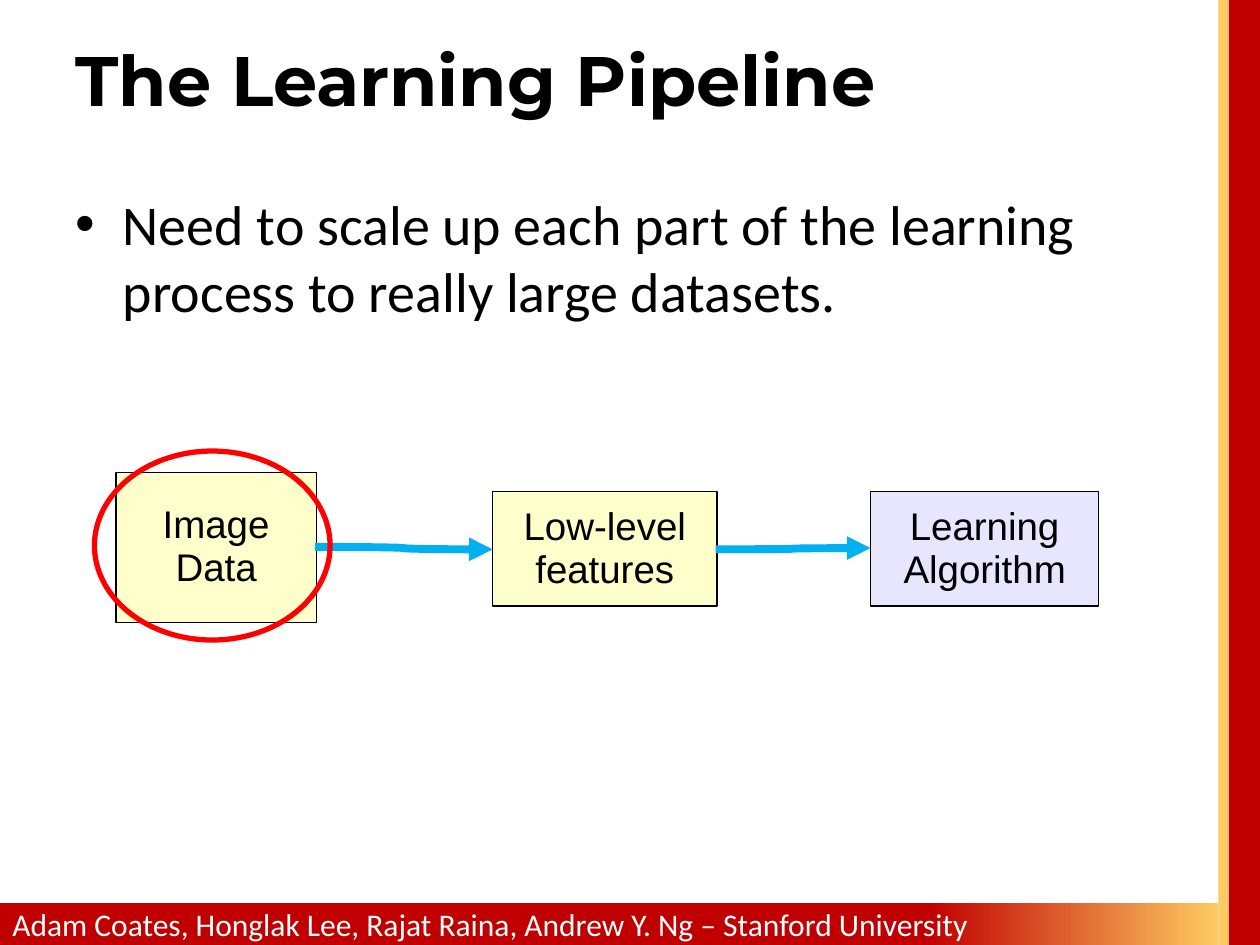
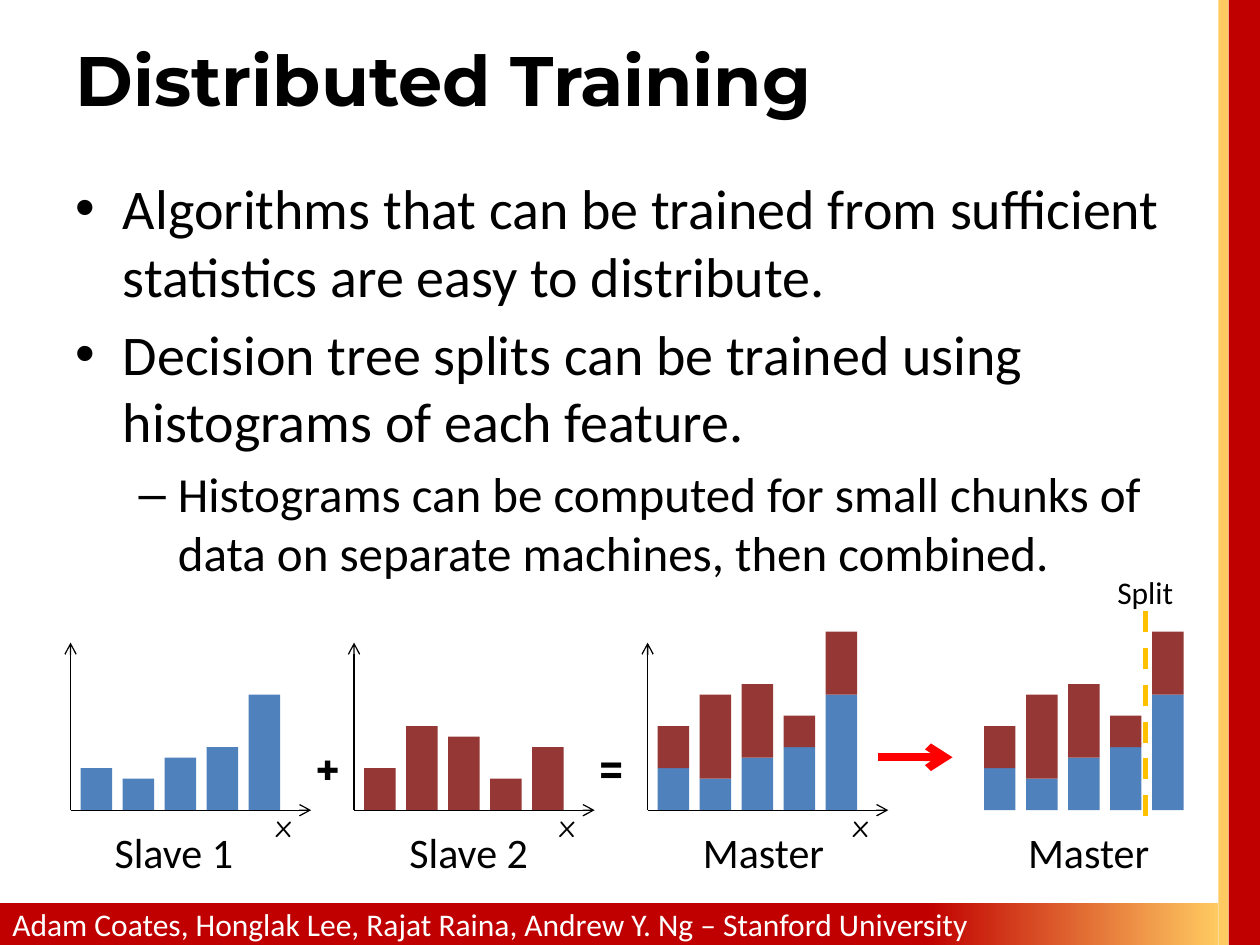
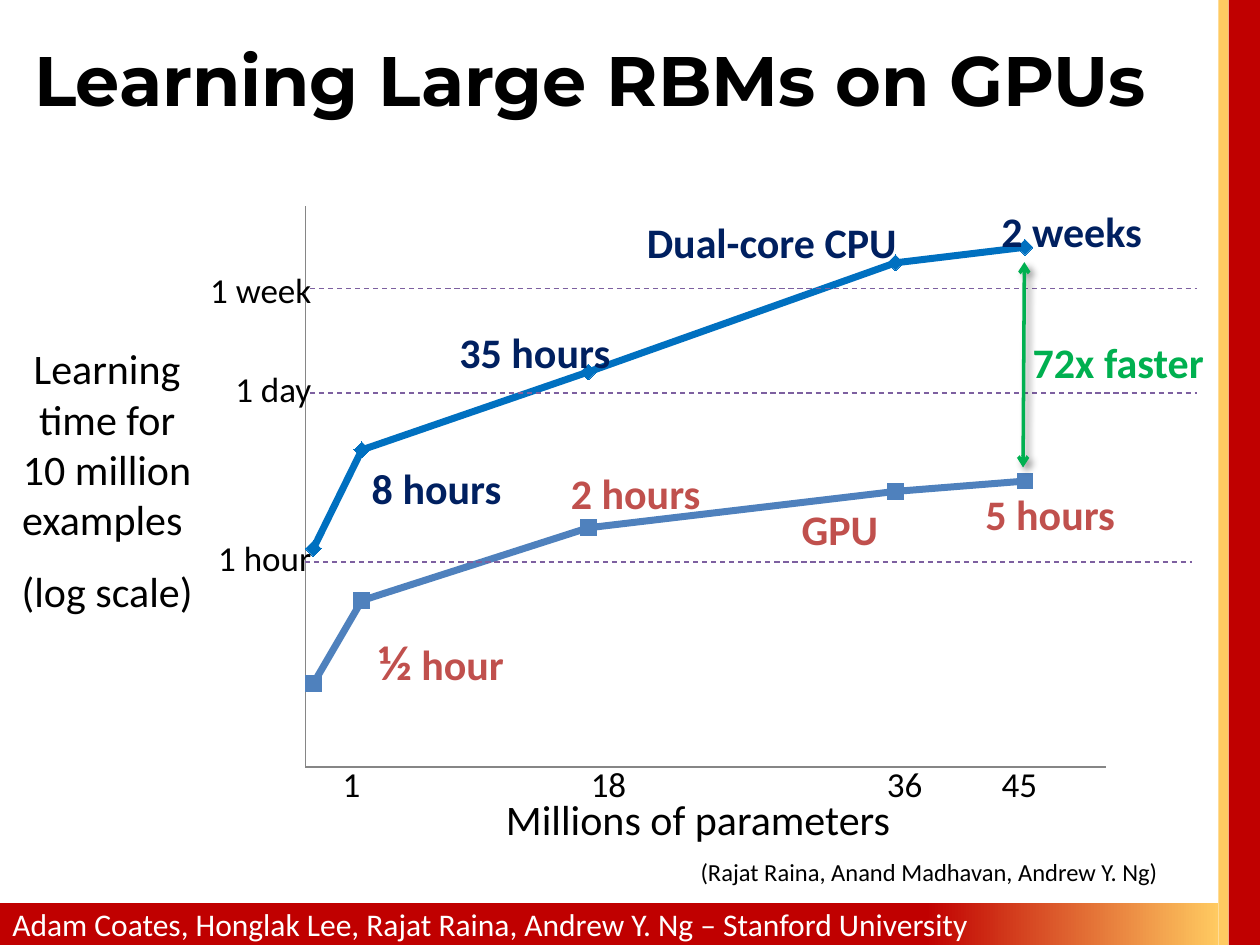
from lxml.etree import SubElement
from pptx import Presentation
from pptx.chart.data import XyChartData
from pptx.dml.color import RGBColor
from pptx.enum.chart import XL_CHART_TYPE as Chart, XL_MARKER_STYLE as Mark
from pptx.enum.chart import XL_TICK_LABEL_POSITION as Label, XL_TICK_MARK as Tick
from pptx.enum.dml import MSO_LINE as Dash
from pptx.enum.shapes import MSO_CONNECTOR as Link, MSO_SHAPE as Kind
from pptx.enum.text import MSO_ANCHOR as Anchor, MSO_AUTO_SIZE as Fit, PP_ALIGN as Align
from pptx.oxml import parse_xml
from pptx.oxml.ns import nsdecls, qn
from pptx.util import Inches, Pt

rgb = RGBColor.from_string
BLACK, WHITE, CRIMSON, GOLD = "000000", "FFFFFF", "C00000", "FFCA61"
BLUE, MAROON, NAVY, ROSE = "4F81BD", "953735", "002060", "C0504D"
GREEN, CYAN, RED = "00B050", "00B0F0", "FF0000"


def add(slide, box, text="", size=24, color=BLACK, bold=False, font="Calibri",
        align=Align.CENTER, kind=None, fill=None, line=None, width=0.75):
    """Add a text box, or a preset shape when a kind is given."""
    box = [Inches(n) for n in box]
    if kind is None:
        shape = slide.shapes.add_textbox(*box)
    else:
        shape = slide.shapes.add_shape(kind, *box)
        shape.shadow.inherit = False
        if fill:
            shape.fill.solid()
            shape.fill.fore_color.rgb = rgb(fill)
        else:
            shape.fill.background()
        if line:
            shape.line.color.rgb = rgb(line)
            shape.line.width = Pt(width)
        else:
            shape.line.fill.background()
    if text:
        frame = shape.text_frame
        frame.word_wrap = True
        frame.text = text
        for para in frame.paragraphs:
            para.alignment = align
            para.font.name, para.font.size, para.font.bold = font, Pt(size), bold
            para.font.color.rgb = rgb(color)
    return shape


def join(slide, start, end, color, width, head=None, tail=None, dash=None,
         kind=Link.STRAIGHT):
    """Add a line with optional arrowheads and no shadow."""
    link = slide.shapes.add_connector(kind, *[Inches(n) for n in (*start, *end)])
    link.line.color.rgb = rgb(color)
    link.line.width = Pt(width)
    if dash:
        link.line.dash_style = dash
    props = link.element.spPr
    for tag, tip in (("a:headEnd", head), ("a:tailEnd", tail)):
        if tip:
            SubElement(props.find(qn("a:ln")), qn(tag), type=tip)
    SubElement(props, qn("a:effectLst"))
    return link


deck = Presentation()
deck.slide_width, deck.slide_height = Inches(10), Inches(7.5)

# Slides with their titles and lists: title, title left and width, body top and height, items
pages = [
    ("The Learning Pipeline", 0.5, 9, 1.45, 1.22, [
        (0, "Need to scale up each part of the learning process to really large datasets.")]),
    ("Distributed Training", 0.5, 9, 1.33, 4.08, [
        (0, "Algorithms that can be trained from sufficient statistics are easy to distribute."),
        (0, "Decision tree splits can be trained using histograms of each feature."),
        (1, "Histograms can be computed for small chunks of data on separate machines, "
            "then combined.")]),
    ("Learning Large RBMs on GPUs", 0.17, 9.5, 0, 0, []),
]
slides = []
for name, left, wide, top, high, items in pages:
    slide = deck.slides.add_slide(deck.slide_layouts[1 if items else 5])
    slides.append(slide)
    title = slide.shapes.title
    title.left, title.top, title.width, title.height = (
        Inches(left), Inches(0), Inches(wide), Inches(1.25))
    title.text_frame.text = name
    title.text_frame.auto_size = Fit.NONE
    title.text_frame.vertical_anchor = Anchor.MIDDLE
    para = title.text_frame.paragraphs[0]
    para.alignment = Align.LEFT
    para.font.name, para.font.size, para.font.bold = "Montserrat", Pt(40), True
    para.font.color.rgb = rgb(BLACK)
    if items:
        body = slide.placeholders[1]
        body.left, body.top, body.width, body.height = (
            Inches(0.5), Inches(top), Inches(9), Inches(high))
        frame = body.text_frame
        frame.text = "\n".join(text for _, text in items)
        frame.auto_size = Fit.NONE
        for para, (level, _) in zip(frame.paragraphs, items):
            para.level = level
            para.font.name, para.font.size = "Calibri", Pt(28 if level else 32)
            para.font.color.rgb = rgb(BLACK)
flow, train, speed = slides

# Bands and footer, moved to the master so that all slides share them
bands = [
    add(flow, (9.75, 0, 0.25, 7.5), kind=Kind.RECTANGLE, fill=CRIMSON),
    add(flow, (9.67, 0, 0.08, 7.5), kind=Kind.RECTANGLE, fill=GOLD),
    add(flow, (0, 7.17, 9.67, 0.33),
        "Adam Coates, Honglak Lee, Rajat Raina, Andrew Y. Ng – Stanford University",
        18, WHITE, align=Align.LEFT, kind=Kind.RECTANGLE, fill=CRIMSON),
]
foot = bands[-1]
foot.text_frame.vertical_anchor = Anchor.MIDDLE
foot.fill.gradient()
foot.fill.gradient_angle = 0
for stop, spot, color in zip(foot.fill.gradient_stops, (0.76, 1), (CRIMSON, GOLD)):
    stop.position = spot
    stop.color.rgb = rgb(color)
for band in bands:
    deck.slide_master.element.cSld.spTree.append(band.element)

# Slide 1: pipeline
steps = [
    ("Image\nData", (0.92, 3.75, 1.59, 1.19), "FFFFCC"),
    ("Low-level features", (3.91, 3.9, 1.78, 0.91), "FFFFCC"),
    ("Learning\nAlgorithm", (6.91, 3.9, 1.81, 0.91), "E6E6FF"),
]
for text, box, fill in steps:
    step = add(flow, box, text, 22, font="Arial", kind=Kind.ROUNDED_RECTANGLE,
               fill=fill, line=BLACK)
    step.adjustments[0] = 0
    step.text_frame.vertical_anchor = Anchor.MIDDLE
    for para in step.text_frame.paragraphs:
        para.line_spacing = 0.93
for start, end in (((2.5, 4.34), (3.91, 4.36)), ((5.68, 4.36), (6.91, 4.35))):
    join(flow, start, end, CYAN, 4.5, tail="triangle", kind=Link.CURVE)
add(flow, (0.75, 3.58, 1.87, 1.5), kind=Kind.OVAL, line=RED, width=3)

# Slide 2: histograms, with bar heights in twelfths of an inch
base = 6.43
first = (BLUE, (4, 3, 5, 6, 11))
second = (MAROON, (4, 8, 7, 3, 6))
plots = [
    (0.64, "Slave 1", 1.38, True, [first]),
    (2.89, "Slave 2", 3.72, True, [second]),
    (5.22, "Master", 6.06, True, [first, second]),
    (7.81, "Master", 8.64, False, [first, second]),
]
for left, name, mid, axes, parts in plots:
    tops = [base] * 5
    for color, counts in parts:
        for i, count in enumerate(counts):
            tops[i] -= count / 12
            add(train, (left + i / 3, tops[i], 0.25, count / 12),
                kind=Kind.RECTANGLE, fill=color)
    add(train, (mid - 0.7, 6.51, 1.4, 0.5), name)
    if axes:
        zero = left - 0.08
        for end in ((zero, 5.1), (zero + 1.91, base)):
            join(train, (zero, base), end, BLACK, 0.75, tail="arrow")
        add(train, (zero + 1.52, 6.35, 0.34, 0.4), "x", 18, font="Comic Neue")
for sign, left in (("+", 2.39), ("=", 4.64)):
    add(train, (left, 5.85, 0.42, 0.5), sign, bold=True, font="Montserrat")
join(train, (6.97, 6.01), (7.56, 6.01), RED, 4.5, tail="arrow")
join(train, (9.09, 4.85), (9.09, 6.6), "FFC000", 3, dash=Dash.DASH)
add(train, (8.69, 4.5, 0.8, 0.4), "Split", 18)

# Slide 3: chart
sizes = (1, 4, 18, 37, 45)
lines = [
    ("Series 1", (42, 61, 76, 97, 100), "0070C0", Mark.DIAMOND, NAVY),
    ("Series 2", (16, 32, 46, 53, 55), BLUE, Mark.SQUARE, ROSE),
]
data = XyChartData()
for name, times, *_ in lines:
    series = data.add_series(name)
    for x, y in zip(sizes, times):
        series.add_data_point(x, y)
chart = speed.shapes.add_chart(Chart.XY_SCATTER_LINES, Inches(2.29), Inches(1.54),
                               Inches(6.62), Inches(4.64), data).chart
chart.has_legend = chart.has_title = False
chart.font.name, chart.font.size = "Calibri", Pt(18)
chart.font.color.rgb = rgb(BLACK)
plot = chart.plots[0]
plot.vary_by_categories = False
for series, (_, _, color, mark, tint) in zip(plot.series, lines):
    series.smooth = False
    series.format.line.color.rgb = rgb(color)
    series.format.line.width = Pt(4)
    series.marker.style, series.marker.size = mark, 9
    series.marker.format.fill.solid()
    series.marker.format.fill.fore_color.rgb = rgb(tint)
    series.marker.format.line.color.rgb = rgb(tint)
for axis, low, high in ((chart.category_axis, 0.5, 50), (chart.value_axis, 0, 108)):
    axis.minimum_scale, axis.maximum_scale = low, high
    axis.has_major_gridlines = False
    axis.major_tick_mark = axis.minor_tick_mark = Tick.NONE
    axis.tick_label_position = Label.NONE
    axis.format.line.color.rgb = rgb("868686")
area = chart.element.find(".//" + qn("c:plotArea"))
for old in area.findall(qn("c:layout")):
    area.remove(old)
area.insert(0, parse_xml(
    f'<c:layout {nsdecls("c")}><c:manualLayout><c:layoutTarget val="inner"/>'
    '<c:xMode val="edge"/><c:yMode val="edge"/><c:x val="0.02"/><c:y val="0.02"/>'
    '<c:w val="0.96"/><c:h val="0.96"/></c:manualLayout></c:layout>'))

# Curve labels
notes = [
    ("5 hours", 6.71, 3.83, 3.25, ROSE), ("2 weeks", 6.88, 1.58, 3.25, NAVY),
    ("GPU", 5.04, 3.95, 3.25, ROSE), ("Dual-core CPU", 4.5, 1.67, 3.25, NAVY),
    ("8 hours", 2.38, 3.62, 2.17, NAVY), ("2 hours", 3.42, 3.66, 3.25, ROSE),
    ("35 hours", 2.62, 2.54, 3.25, NAVY), ("72x faster", 7.25, 2.62, 3.25, GREEN),
]
for text, left, top, wide, color in notes:
    add(speed, (left, top, wide, 0.5), text, color=color, bold=True)
half = add(speed, (2.29, 4.96, 2.42, 0.57), "½", 28, ROSE, True)
run = half.text_frame.paragraphs[0].add_run()
run.text = " hour"
run.font.size = Pt(24)

# Axis labels and time marks
side = add(speed, (0.04, 2.67, 1.62, 2.32),
           "Learning time for 10 million examples \n(log scale)")
side.text_frame.paragraphs[1].space_before = Pt(12)
add(speed, (2.83, 6.25, 5.42, 0.5), "Millions of parameters")
for text, mid in (("1", 2.79), ("18", 4.83), ("36", 7.18), ("45", 8.09)):
    add(speed, (mid - 0.3, 6, 0.6, 0.44), text, 20)
for text, top, left, y in (("1 hour", 4.21, 2.42, 4.46), ("1 day", 2.87, 2.46, 3.12),
                           ("1 week", 2.08, 2.46, 2.29)):
    join(speed, (left, y), (left + 7.04, y), "7D60A0", 0.75, dash=Dash.DASH)
    add(speed, (1.37, top, 1.2, 0.44), text, 20, align=Align.RIGHT)
add(speed, (5.17, 6.75, 4.41, 0.33), "(Rajat Raina, Anand Madhavan, Andrew Y. Ng)", 14)

# Speed-up arrow with a soft shadow
gap = join(speed, (8.13, 2.08), (8.12, 3.71), GREEN, 2, head="arrow", tail="arrow")
gap.element.spPr.find(qn("a:effectLst")).append(parse_xml(
    f'<a:outerShdw {nsdecls("a")} blurRad="{Pt(4)}" dist="{Pt(3)}" dir="2700000">'
    f'<a:srgbClr val="{BLACK}"><a:alpha val="40000"/></a:srgbClr></a:outerShdw>'))

deck.save("out.pptx")
